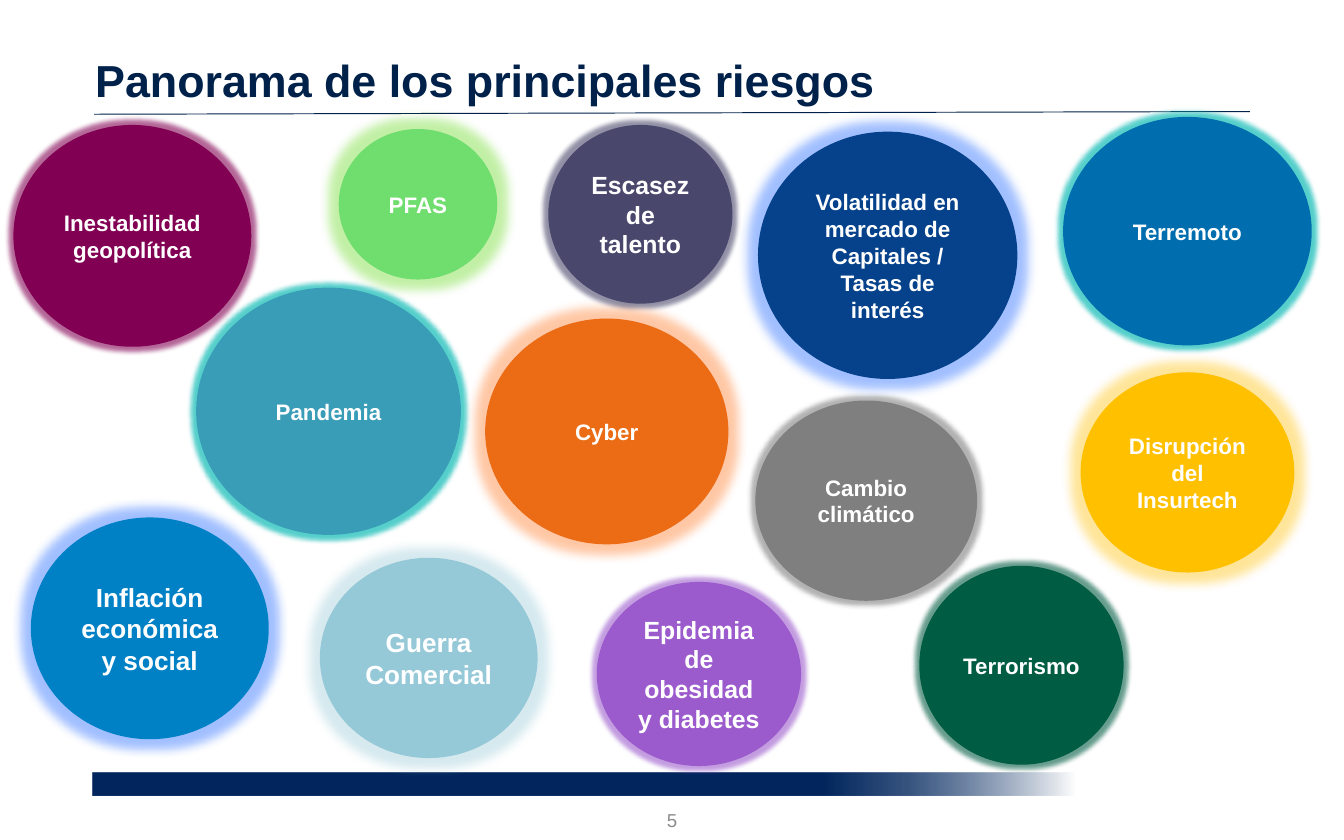
import pptx
import pptx.util
import pptx.dml.color
import pptx.enum.shapes
import pptx.enum.text
import pptx.oxml
import pptx.oxml.ns

Inches, Pt = pptx.util.Inches, pptx.util.Pt
RGB = pptx.dml.color.RGBColor.from_string
Shape = pptx.enum.shapes.MSO_SHAPE
Align = pptx.enum.text.PP_ALIGN
Anchor = pptx.enum.text.MSO_ANCHOR

THEME = {
    "font": "Arial", "ink": "00214A", "bar": "00265D",
    "white": "FFFFFF", "gray": "8C8C8C",
    "head": 24, "page": 10, "small": 12, "mid": 13.3, "big": 14,
}
# Glow styles: radius in points, opacity in percent
THIN, WIDE, AQUA = (5, 60), (11, 40), (5, 80)

TITLE = "Panorama de los principales riesgos"
PAGE = "5"
# Text, box, fill, type size, glow colour, glow style (back to front)
RISKS = [
    ("PFAS", (2.52, 0.96, 1.18, 1.12), "70DE6E", "small", "67DA20", WIDE),
    ("Epidemia de obesidad y diabetes", (4.44, 4.33, 1.52, 1.37),
     "9C5BCD", "mid", "9C5BCD", THIN),
    ("Cambio climático", (5.62, 2.98, 1.65, 1.49),
     "7F7F7F", "small", "7F7F7F", THIN),
    ("Cyber", (3.61, 2.37, 1.81, 1.68), "EB6C15", "small", "FF751E", WIDE),
    ("Terrorismo", (6.84, 4.21, 1.52, 1.48),
     "005C42", "small", "005C42", THIN),
    ("Volatilidad en mercado de Capitales / Tasas de interés",
     (5.64, 0.98, 1.93, 1.84), "06428B", "small", "1661FF", WIDE),
    ("Inflación económica y social", (0.23, 3.85, 1.77, 1.65),
     "0081C6", "big", "1661FF", WIDE),
    ("Inestabilidad geopolítica", (0.1, 0.93, 1.77, 1.65),
     "820053", "small", "820053", THIN),
    ("Pandemia", (1.46, 2.14, 1.97, 1.84),
     "3A9DB8", "small", "2BC3BE", AQUA),
    ("Guerra Comercial", (2.38, 4.15, 1.62, 1.49),
     "96C9D8", "big", "96C9D8", WIDE),
    ("Terremoto", (7.91, 0.87, 1.85, 1.7),
     "006EAE", "small", "2BC3BE", AQUA),
    ("Disrupción del Insurtech", (8.04, 2.77, 1.59, 1.49),
     "FFC000", "small", "FFBF00", WIDE),
    ("Escasez de talento", (4.08, 0.93, 1.37, 1.33),
     "49476B", "mid", "49476B", THIN),
]
# Bar fade: position, colour and opacity, in percent
FADE = [(0, "bar", 100), (74, "bar", 100), (83, "bar", 78),
        (100, "white", 100)]


def parts(box):
    return [Inches(n) for n in box]


def node(xml):
    head, tail = xml.split(">", 1)
    return pptx.oxml.parse_xml(
        f"{head} {pptx.oxml.ns.nsdecls('a')}>{tail}")


def tint(color, clear):
    return (f'<a:srgbClr val="{color}"><a:alpha val="{clear * 1000}"/>'
            '</a:srgbClr>')


def write(shape, text, size, color, anchor, align, bold=True, pad=0.1):
    frame = shape.text_frame
    form = {"word_wrap": True, "vertical_anchor": anchor,
            "margin_left": Inches(pad), "margin_right": Inches(pad)}
    for key, val in form.items():
        setattr(frame, key, val)
    para = frame.paragraphs[0]
    para.alignment = align
    run = para.add_run()
    run.text = text
    look = {"name": THEME["font"], "size": Pt(THEME[size]), "bold": bold}
    for key, val in look.items():
        setattr(run.font, key, val)
    run.font.color.rgb = RGB(THEME[color])
    return para


def glow(shape, color, style):
    size, clear = style
    old = shape.element.spPr.find(pptx.oxml.ns.qn("a:effectLst"))
    old.append(node(f'<a:glow rad="{Pt(size)}">{tint(color, clear)}</a:glow>'))


deck = pptx.Presentation()
deck.slide_width, deck.slide_height = Inches(10), Inches(6.25)
slide = deck.slides.add_slide(deck.slide_layouts[6])
shapes = slide.shapes

# Fading foot bar
bar = shapes.add_shape(Shape.RECTANGLE, *parts((0.69, 5.75, 7.31, 0.17)))
bar.shadow.inherit = False
bar.line.fill.background()
stops = "".join(f'<a:gs pos="{at * 1000}">{tint(THEME[color], clear)}</a:gs>'
                for at, color, clear in FADE)
bar.element.spPr.find(pptx.oxml.ns.qn("a:prstGeom")).addnext(node(
    f'<a:gradFill rotWithShape="1"><a:gsLst>{stops}</a:gsLst>'
    '<a:lin ang="0" scaled="0"/></a:gradFill>'))

# Rule under the title
rule = shapes.add_connector(pptx.enum.shapes.MSO_CONNECTOR.STRAIGHT,
                            *parts((0.7, 0.85, 9.3, 0.83)))
rule.line.color.rgb = RGB(THEME["ink"])
rule.line.width = Pt(0.5)
rule.element.spPr.append(node("<a:effectLst></a:effectLst>"))

# Page number and title
page = shapes.add_textbox(*parts((4.28, 5.96, 1.44, 0.29)))
write(page, PAGE, "page", "gray", Anchor.MIDDLE, Align.CENTER, False)
title = shapes.add_textbox(*parts((0.61, 0.2, 8.59, 0.65)))
write(title, TITLE, "head", "ink", Anchor.BOTTOM,
      Align.LEFT).line_spacing = 0.9

# Risk bubbles
for text, box, fill, size, halo, style in RISKS:
    risk = shapes.add_shape(Shape.OVAL, *parts(box))
    risk.shadow.inherit = False
    risk.fill.solid()
    risk.fill.fore_color.rgb = RGB(fill)
    risk.line.fill.background()
    glow(risk, halo, style)
    write(risk, text, size, "white", Anchor.MIDDLE, Align.CENTER, pad=0.08)

deck.save("out.pptx")
